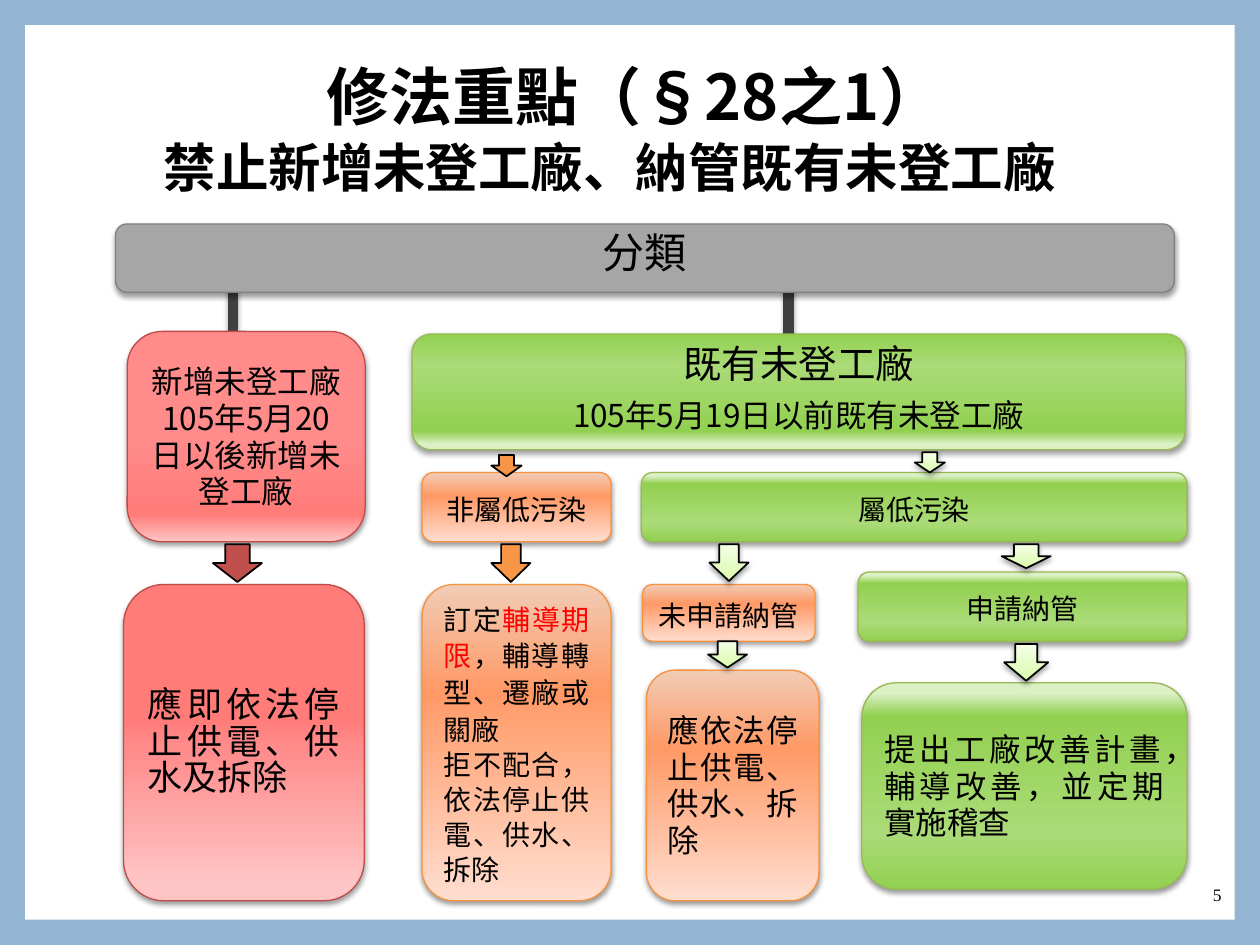
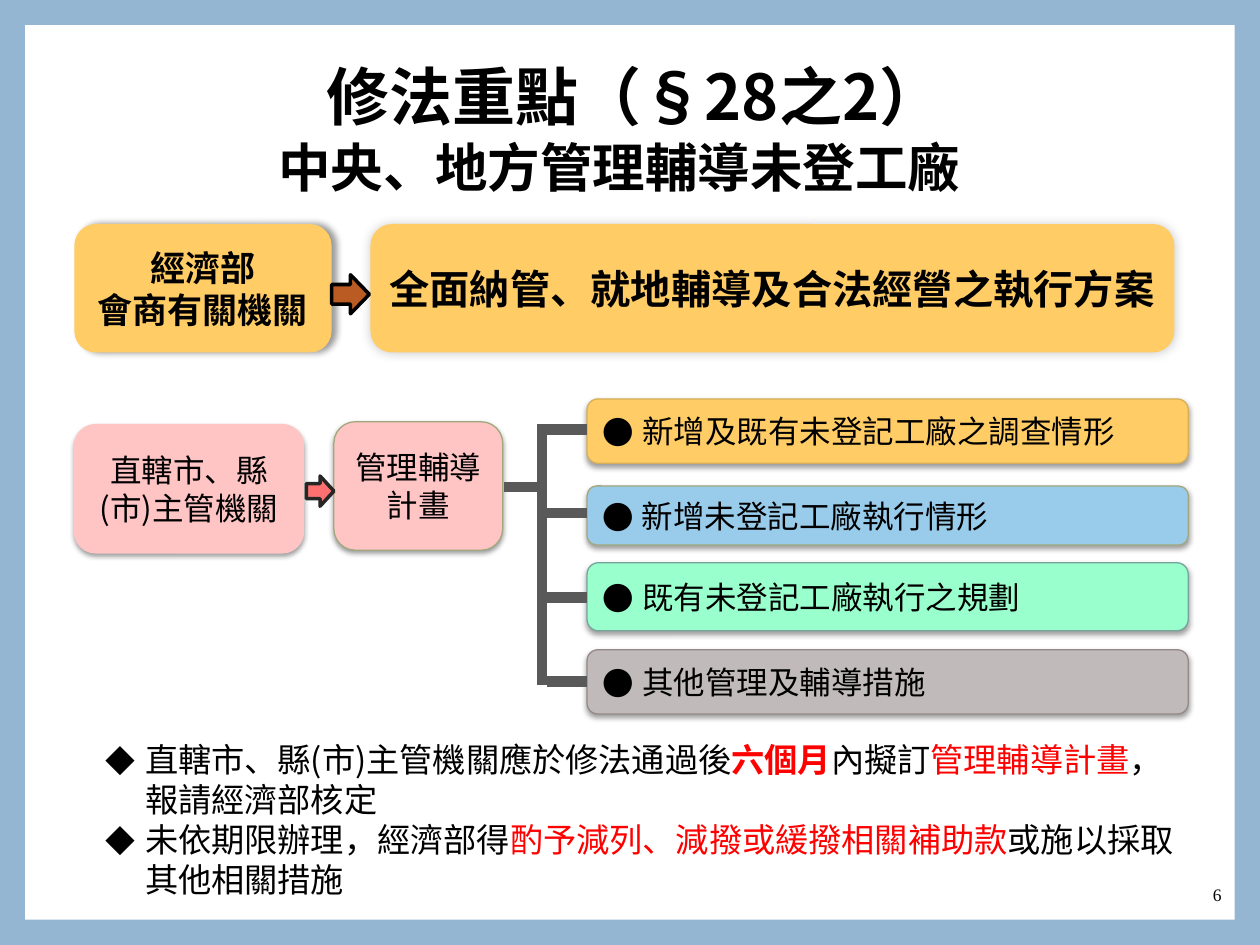
from lxml.etree import SubElement
from pptx import Presentation
from pptx.dml.color import RGBColor
from pptx.enum.shapes import MSO_CONNECTOR as Line, MSO_SHAPE as Shape
from pptx.enum.text import MSO_ANCHOR as Anchor, PP_ALIGN as Align
from pptx.oxml.ns import qn
from pptx.util import Pt

COLORS = {
    "frame": "94B6D2", "paper": "FFFFFF", "text": "000000", "alert": "FF0000",
    "gray": "A6A6A6", "gray_edge": "808080", "trunk": "404040", "branch": "595959",
    "red_edge": "BF4C48", "red_arrow": "C0504D", "orange_edge": "F69240",
    "orange_arrow": "F79646", "green_edge": "98B955", "amber": "FFCC66",
    "amber_edge": "D6AF57", "pink": "FFC5C5", "olive_edge": "A2A87D",
    "sky": "99CCEB", "mint": "99FFCC", "mint_edge": "77A49A",
    "stone": "C0BABA", "stone_edge": "938989", "rust": "B95B22",
    "coral": "FF7171", "ink": "262626",
}
GRADIENTS = {
    "red": [(0, "FFC5C5"), (13, "FF7C79"), (49, "FF8B8B")],
    "deep_red": [(5, "FFC5C5"), (49, "FF8B8B"), (57, "FF7C79")],
    "orange": [(0, "FFDED0"), (66, "FF9966"), (100, "F1CCB5")],
    "green": [(0, "92D050"), (27, "ABDB78"), (84, "92D050"), (95, "DBF0C5")],
    "pale": [(0, "DAFDA7"), (35, "E4FCC2"), (100, "F5FFE7")],
}
FONT = "Noto Sans CJK TC"
SOFT = (38, 3.1, 1.6, 90)
TRUNK_SHADOW = (35, 3.1, 1.8, 90)
CENTER = {"alignment": Align.CENTER}
EXACT = {**CENTER, "line_spacing": Pt(21)}
SPACED = {**EXACT, "space_after": Pt(6)}
LABEL = {**SPACED, "line_spacing": Pt(21.6)}
JUSTIFIED = {"alignment": Align.JUSTIFY, "line_spacing": Pt(21)}
HEADING = {**CENTER, "line_spacing": 1.2}


def assign(target, values):
    for name, value in values.items():
        setattr(target, name, value)


def rgb(name):
    return RGBColor.from_string(COLORS[name])


def add_child(parent, tag, **values):
    return SubElement(parent, qn(tag), {key: str(value) for key, value in values.items()})


def place(region, left, top, width, height):
    return [Pt(value) for value in (region[0] + left, region[1] + top, width, height)]


def add_shadow(effects, opacity, blur, distance, angle):
    shadow = add_child(effects, "a:outerShdw", blurRad=Pt(blur), dist=Pt(distance),
                       dir=angle * 60000, algn="ctr", rotWithShape=0)
    color = add_child(shadow, "a:srgbClr", val=COLORS["text"])
    add_child(color, "a:alpha", val=opacity * 1000)


def paint(shape, fill, angle):
    if fill in COLORS:
        shape.fill.solid()
        shape.fill.fore_color.rgb = rgb(fill)
        return
    shape.fill.gradient()
    shape.fill.gradient_angle = 360 - angle
    stops = shape._element.spPr.find(qn("a:gradFill")).find(qn("a:gsLst"))
    for stop in list(stops):
        stops.remove(stop)
    for position, color in GRADIENTS[fill]:
        add_child(add_child(stops, "a:gs", pos=position * 1000), "a:srgbClr", val=color)


def add_block(page, kind, bounds, fill, edge=None, weight=0.75, shadow=None, angle=270):
    shape = page.shapes.add_shape(kind, *bounds)
    shape.shadow.inherit = False
    paint(shape, fill, angle)
    if edge:
        shape.line.color.rgb = rgb(edge)
        shape.line.width = Pt(weight)
    else:
        shape.line.fill.background()
    if shadow:
        add_shadow(shape._element.spPr.find(qn("a:effectLst")), *shadow)
    return shape


def add_line(page, region, start, end, color, shadow=None):
    points = [Pt(region[i % 2] + value) for i, value in enumerate((*start, *end))]
    line = page.shapes.add_connector(Line.STRAIGHT, *points)
    line.line.color.rgb = rgb(color)
    line.line.width = Pt(6)
    effects = add_child(line._element.spPr, "a:effectLst")
    if shadow:
        add_shadow(effects, *shadow)


def write(shape, paras, size, anchor=Anchor.MIDDLE, bold=False, font=FONT, bullet=None):
    frame = shape.text_frame
    assign(frame, {"word_wrap": True, "vertical_anchor": anchor})
    for index, (spans, layout) in enumerate(paras):
        para = frame.add_paragraph() if index else frame.paragraphs[0]
        if bullet:
            props = para._p.get_or_add_pPr()
            props.set("marL", str(Pt(22.5)))
            props.set("indent", str(-Pt(22.5)))
            mark, scale = bullet
            add_child(props, "a:buSzPct", val=scale * 1000)
            add_child(props, "a:buFont", typeface=FONT)
            add_child(props, "a:buChar", char=mark)
        assign(para, layout)
        for text, color, strong in [(spans, "text", bold)] if isinstance(spans, str) else spans:
            span = para.add_run()
            span.text = text
            span.font.color.rgb = rgb(color)
            assign(span.font, {"size": Pt(size), "bold": strong, "name": font})
            add_child(span._r.get_or_add_rPr(), "a:ea", typeface=font)


def add_text(page, bounds, paras, size, **options):
    write(page.shapes.add_textbox(*bounds), paras, size, **options)


def add_page(deck, number, title, subtitle, subtitle_box, subtitle_layout):
    page = deck.slides.add_slide(deck.slide_layouts[6])
    page.background.fill.solid()
    page.background.fill.fore_color.rgb = rgb("frame")
    region = (0, 0)
    add_block(page, Shape.RECTANGLE, place(region, 14.4, 14.4, 691.2, 511.2), "paper")
    add_text(page, place(region, 604.4, 496.8, 100.8, 28.8),
             [(str(number), {"alignment": Align.RIGHT})], 10, font="Times New Roman")
    add_text(page, place(region, 53.3, 12.2, 618.5, 76.3), [(title, HEADING)], 36, bold=True)
    add_text(page, place(region, *subtitle_box), [(subtitle, subtitle_layout)], 30,
             anchor=Anchor.TOP, bold=True)
    return page


def add_classification(page, region):
    for x, bottom in ((384.7, 62.8), (67.2, 61.4)):
        add_line(page, region, (x, 23.2), (x, bottom), "trunk", TRUNK_SHADOW)

    guidance = [("訂定", "text", False), ("輔導期限", "alert", False),
                ("，輔導轉型、遷廠或關廠", "text", False)]
    blocks = [
        ((0, 0, 605, 39), "gray", "gray_edge", 270, 24, [("分類", LABEL)]),
        ((6.7, 61.4, 136, 120.2), "red", "red_edge", 270, 18,
         [("新增未登工廠", EXACT), ("105年5月20日以後新增未登工廠", EXACT)]),
        ((175.2, 142, 108, 39.6), "orange", "orange_edge", 270, 16, [("非屬低污染", LABEL)]),
        ((300.5, 142, 311.8, 39.6), "green", "green_edge", 270, 16, [("屬低污染", LABEL)]),
        ((301.2, 206, 98.6, 32.4), "orange", "orange_edge", 270, 16, [("未申請納管", LABEL)]),
        ((424.3, 198.9, 188, 39.6), "green", "green_edge", 270, 16, [("申請納管", LABEL)]),
        ((4.6, 206, 137.5, 180.7), "deep_red", "red_edge", 270, 20,
         [("應即依法停止供電、供水及拆除", JUSTIFIED)]),
        ((175.2, 206, 108, 180.7), "orange", "orange_edge", 270, 16,
         [(guidance, JUSTIFIED),
          ("拒不配合，依法停止供電、供水、拆除", {**JUSTIFIED, "line_spacing": Pt(20)})]),
        ((303.4, 255, 98.6, 131.8), "orange", "orange_edge", 270, 18,
         [("應依法停止供電、供水、拆除", JUSTIFIED)]),
        ((426.5, 262.2, 185.8, 118), "green", "green_edge", 270, 18,
         [("提出工廠改善計畫，輔導改善，並定期實施稽查", JUSTIFIED)]),
    ]
    for bounds, fill, edge, angle, size, paras in blocks:
        block = add_block(page, Shape.ROUNDED_RECTANGLE, place(region, *bounds), fill, edge,
                          shadow=SOFT, angle=angle)
        write(block, paras, size)

    existing = add_block(page, Shape.ROUNDED_RECTANGLE, place(region, 169.4, 62.8, 442, 66.2),
                         "green", "green_edge", shadow=SOFT, angle=90)
    write(existing, [("既有未登工廠", SPACED), ("105年5月19日以前既有未登工廠", SPACED)], 18)
    existing.text_frame.paragraphs[0].runs[0].font.size = Pt(22)

    arrows = [
        ((55.7, 183, 28, 21.6), "red_arrow"), ((214.8, 132, 17.3, 12.2), "orange_arrow"),
        ((214.8, 183, 22.3, 21.6), "orange_arrow"), ((456.7, 130.5, 17.3, 11.5), "pale"),
        ((339.4, 183, 22.3, 21), "pale"), ((506.4, 183, 28, 13.7), "pale"),
        ((338.6, 238.5, 22.3, 15), "pale"), ((507.8, 240, 25.2, 21), "pale"),
    ]
    for bounds, fill in arrows:
        add_block(page, Shape.DOWN_ARROW, place(region, *bounds), fill, "text", 1,
                  SOFT if fill == "pale" else None)


def add_program(page, region):
    ministry = add_block(page, Shape.ROUNDED_RECTANGLE, place(region, 0, 0, 147, 73.4),
                         "amber", shadow=(40, 4, 3, 0))
    write(ministry, [("經濟部", CENTER), ("會商有關機關", CENTER)], 20, bold=True)
    program = add_block(page, Shape.ROUNDED_RECTANGLE, place(region, 169.2, 0, 459.4, 73.4),
                        "amber", shadow=(20, 6, 0, 315))
    write(program, [("全面納管、就地輔導及合法經營之執行方案", CENTER)], 23, bold=True)
    assign(program.text_frame, {"margin_left": Pt(4), "margin_right": Pt(4)})
    add_block(page, Shape.RIGHT_ARROW, place(region, 147, 29, 21.6, 22.3), "rust", "text", 2)


def add_local_plan(page, region):
    steps = [
        ((0, 14.6, 131, 73.4), "pink", "直轄市、縣(市)主管機關"),
        ((148.3, 13, 96.5, 73.4), "olive_edge", "管理輔導計畫"),
    ]
    for bounds, edge, text in steps:
        step = add_block(page, Shape.ROUNDED_RECTANGLE, place(region, *bounds), "pink", edge,
                         shadow=SOFT)
        write(step, [(text, CENTER)], 18)
    add_block(page, Shape.RIGHT_ARROW, place(region, 132.5, 44, 15.8, 17.3), "coral", "ink", 2)

    measures = [
        (0, 36.7, "amber", "amber_edge", "新增及既有未登記工廠之調查情形"),
        (49.7, 33.8, "sky", "olive_edge", "新增未登記工廠執行情形"),
        (93.6, 38.9, "mint", "mint_edge", "既有未登記工廠執行之規劃"),
        (143.3, 36.7, "stone", "stone_edge", "其他管理及輔導措施"),
    ]
    add_line(page, region, (245.5, 50.4), (267.1, 50.4), "branch")
    add_line(page, region, (267.1, 14.4), (267.1, 163.5), "branch")
    for index, (top, height, fill, edge, text) in enumerate(measures):
        measure = add_block(page, Shape.ROUNDED_RECTANGLE, place(region, 293, top, 343.5, height),
                            fill, edge, shadow=SOFT)
        write(measure, [(text, {"alignment": Align.LEFT})], 18, bullet=("●", 100))
        y = 17.3 + 48 * index
        add_line(page, region, (270, y), (293, y), "branch")


def add_notes(page, region):
    deadline = [("直轄市、縣(市)主管機關應於修法通過後", "text", False),
                ("六個月", "alert", True), ("內擬訂", "text", False),
                ("管理輔導計畫", "alert", False), ("，報請經濟部核定", "text", False)]
    penalty = [("未依期限辦理，經濟部得", "text", False),
               ("酌予減列、減撥或緩撥相關補助款", "alert", False),
               ("或施以採取其他相關措施", "text", False)]
    add_text(page, place(region, 0, 0, 635, 99.4), [(deadline, {}), (penalty, {})], 19,
             anchor=Anchor.TOP, bullet=("◆", 90))


def main():
    deck = Presentation()
    assign(deck, {"slide_width": Pt(720), "slide_height": Pt(540)})
    page = add_page(deck, 5, "修法重點（§28之1）", "禁止新增未登工廠、納管既有未登工廠",
                    (86.4, 66.2, 561.6, 51), {"line_spacing": 1.2})
    add_classification(page, (66, 128))
    page = add_page(deck, 6, "修法重點（§28之2）", "中央、地方管理輔導未登工廠",
                    (92.2, 66.2, 523.4, 51), HEADING)
    add_program(page, (42.5, 128))
    add_local_plan(page, (42.5, 228))
    add_notes(page, (53.3, 419))
    deck.save("out.pptx")


if __name__ == "__main__":
    main()
